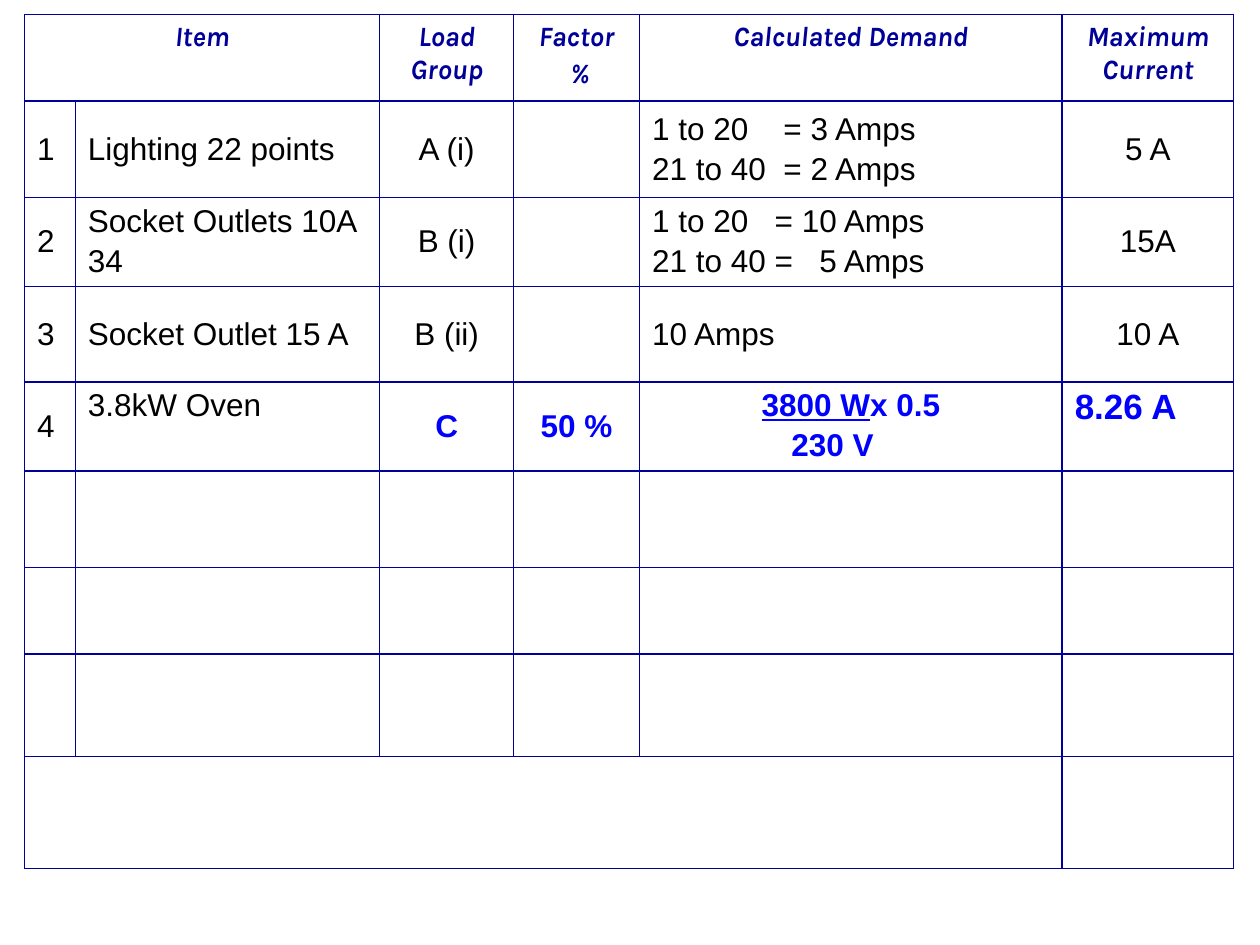
"""Build the maximum demand table slide."""
from lxml.etree import SubElement
from pptx import Presentation
from pptx.dml.color import RGBColor
from pptx.enum.text import MSO_ANCHOR, PP_ALIGN
from pptx.oxml.ns import qn
from pptx.util import Pt

NAVY = RGBColor(0x00, 0x00, 0x99)
BORDER = RGBColor(0x01, 0x01, 0x99)
BLUE = RGBColor(0x00, 0x00, 0xFF)
BLACK = RGBColor(0x00, 0x00, 0x00)

COL_WIDTHS = [29, 174, 76.5, 72, 241.5, 98]
ROW_HEIGHTS = [49.5, 55, 51, 54.5, 51, 55, 49.5, 58.5, 64]
ROWS = [
    ["Item", "", "Load Group", "Factor\n %", "Calculated Demand", "Maximum Current"],
    ["1", "Lighting 22 points", "A (i)", "", "1 to 20\t= 3 Amps\n21 to 40\t= 2 Amps", "5 A"],
    ["2", "Socket Outlets 10A\n34", "B (i)", "", "1 to 20\t= 10 Amps\n21 to 40\t=\t5 Amps", "15A"],
    ["3", "Socket Outlet 15 A", "B (ii)", "", "10 Amps", "10 A"],
    ["4", "3.8kW Oven", "C", "50 %", "3800 W\n230 V", "8.26 A"],
]
TAB_STOPS = {1: [75], 2: [70, 95.5]}
CENTRED_COLS = (2, 3, 5)
OVEN_ROW = 4


def add_borders(cell):
    tcPr = cell._tc.get_or_add_tcPr()
    for side in ("a:lnL", "a:lnR", "a:lnT", "a:lnB"):
        ln = SubElement(tcPr, qn(side), w=str(Pt(1)))
        fill = SubElement(ln, qn("a:solidFill"))
        SubElement(fill, qn("a:srgbClr"), val=str(BORDER))


def add_tabs(p, stops):
    tabs = SubElement(p._p.get_or_add_pPr(), qn("a:tabLst"))
    for stop in stops:
        SubElement(tabs, qn("a:tab"), pos=str(Pt(stop)), algn="l")


prs = Presentation()
prs.slide_width, prs.slide_height = Pt(720), Pt(540)
s = prs.slides.add_slide(prs.slide_layouts[6])

frame = s.shapes.add_table(len(ROW_HEIGHTS), len(COL_WIDTHS), Pt(14), Pt(8.25),
                           Pt(sum(COL_WIDTHS)), Pt(sum(ROW_HEIGHTS)))
table = frame.table
table.first_row = table.horz_banding = False
for col, width in zip(table.columns, COL_WIDTHS):
    col.width = Pt(width)
for row, height in zip(table.rows, ROW_HEIGHTS):
    row.height = Pt(height)
for cell in table.iter_cells():
    add_borders(cell)
    cell.fill.background()
table.cell(0, 0).merge(table.cell(0, 1))
table.cell(8, 0).merge(table.cell(8, 4))

for i, texts in enumerate(ROWS):
    for j, text in enumerate(texts):
        if not text:
            continue
        header = i == 0
        result = i == OVEN_ROW and j >= 2
        cell = table.cell(i, j)
        cell.text_frame.text = text
        top = header or (i == OVEN_ROW and j in (1, 4, 5))
        cell.vertical_anchor = MSO_ANCHOR.TOP if top else MSO_ANCHOR.MIDDLE
        for n, p in enumerate(cell.text_frame.paragraphs):
            centred = header or j in CENTRED_COLS
            p.alignment = PP_ALIGN.CENTER if centred else PP_ALIGN.LEFT
            if n:
                p.space_before = Pt(2.8)
            if j == 4 and i in TAB_STOPS:
                add_tabs(p, TAB_STOPS[i])
            if result and j == 4 and n == 0:
                p.alignment = PP_ALIGN.CENTER
                p.runs[0].font.underline = True
                p.add_run().text = "x 0.5"
            for r in p.runs:
                r.font.name = "Karla" if header else "Arial"
                r.font.size = Pt(16 if header else 18)
                r.font.bold = header or result
                r.font.italic = header
                r.font.color.rgb = NAVY if header else BLUE if result else BLACK

volts = table.cell(OVEN_ROW, 4).text_frame.paragraphs[1]
volts._p.get_or_add_pPr().set("marL", str(Pt(79.5)))
amps = table.cell(OVEN_ROW, 5).text_frame.paragraphs[0]
amps.alignment = PP_ALIGN.LEFT
amps.runs[0].font.size = Pt(20)

prs.save("out.pptx")
